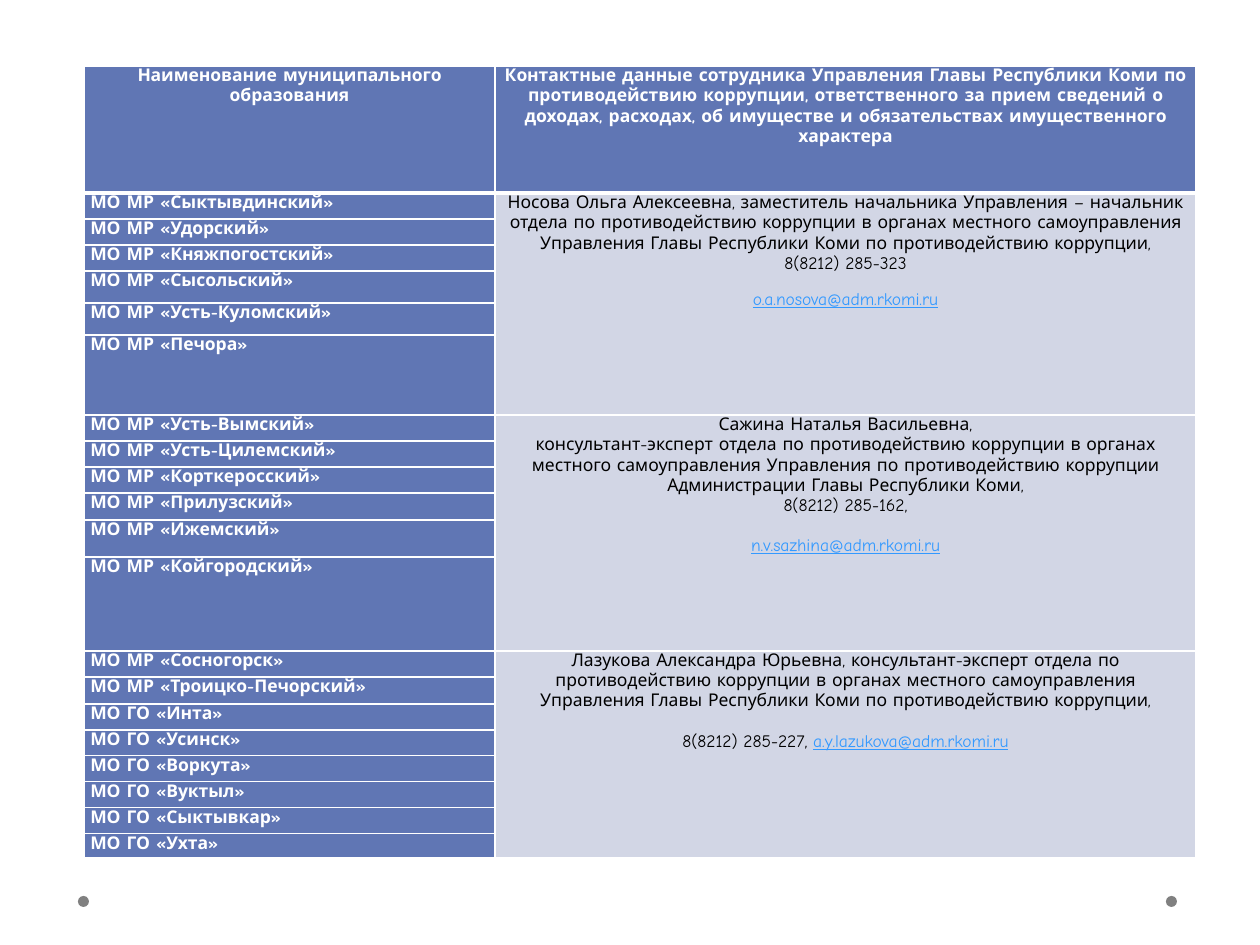
import pptx
import pptx.dml.color
import pptx.enum.shapes
import pptx.enum.text
import pptx.util
import lxml.etree

PX = 914400 // 126
FONT = "Comic Neue"
COLORS = {
    "white": "FFFFFF",
    "black": "000000",
    "district": "6076B4",
    "contact": "D2D6E5",
    "email": "3399FF",
    "dot": "808080",
}
ALIGN = pptx.enum.text.PP_ALIGN

HEADER_HEIGHT = 127
HEADERS = [
    "Наименование муниципального образования",
    "Контактные данные сотрудника Управления Главы Республики Коми по "
    "противодействию коррупции, ответственного за прием сведений о доходах, "
    "расходах, об имуществе и обязательствах имущественного характера",
]

# Each group: districts with row heights, then contact paragraphs
# (space before in points, text, e-mail)
GROUPS = [
    (
        [("МО МР «Сыктывдинский»", 26), ("МО МР «Удорский»", 26),
         ("МО МР «Княжпогостский»", 26), ("МО МР «Сысольский»", 32),
         ("МО МР «Усть-Куломский»", 32), ("МО МР «Печора»", 80)],
        [(0, "Носова Ольга Алексеевна, заместитель начальника Управления – "
             "начальник отдела по противодействию коррупции в органах местного "
             "самоуправления Управления Главы Республики Коми по "
             "противодействию коррупции,", ""),
         (0, "8(8212) 285-323", ""),
         (9, "", "o.a.nosova@adm.rkomi.ru")],
    ),
    (
        [("МО МР «Усть-Вымский»", 26), ("МО МР «Усть-Цилемский»", 26),
         ("МО МР «Корткеросский»", 26), ("МО МР «Прилузский»", 27),
         ("МО МР «Ижемский»", 37), ("МО МР «Койгородский»", 94)],
        [(0, "Сажина Наталья Васильевна,", ""),
         (0, "консультант-эксперт отдела по противодействию коррупции в органах "
             "местного самоуправления Управления по противодействию коррупции "
             "Администрации Главы Республики Коми,\v8(8212) 285-162,", ""),
         (11.5, "", "n.v.sazhina@adm.rkomi.ru")],
    ),
    (
        [("МО МР «Сосногорск»", 26), ("МО МР «Троицко-Печорский»", 27),
         ("МО ГО «Инта»", 26), ("МО ГО «Усинск»", 26), ("МО ГО «Воркута»", 26),
         ("МО ГО «Вуктыл»", 26), ("МО ГО «Сыктывкар»", 26), ("МО ГО «Ухта»", 24)],
        [(0, "Лазукова Александра Юрьевна, консультант-эксперт отдела по "
             "противодействию коррупции в органах местного самоуправления "
             "Управления Главы Республики Коми по противодействию коррупции,", ""),
         (11.5, "8(8212) 285-227, ", "a.y.lazukova@adm.rkomi.ru")],
    ),
]


def rgb(name):
    return pptx.dml.color.RGBColor.from_string(COLORS[name])


def format_run(run, color, bold=False, underline=False):
    run.font.name = FONT
    run.font.size = pptx.util.Pt(10)
    run.font.bold = bold
    run.font.underline = underline
    run.font.color.rgb = rgb(color)


def style_cell(cell, fill, top=1, bottom=1):
    """Set margins, white borders (widths in points) and fill."""
    cell.margin_left = cell.margin_right = pptx.util.Inches(0.05)
    cell.margin_top = cell.margin_bottom = 0
    properties = cell._tc.get_or_add_tcPr()
    for side, width in (("L", 1), ("R", 1), ("T", top), ("B", bottom)):
        line = lxml.etree.SubElement(
            properties, pptx.oxml.ns.qn(f"a:ln{side}"), w=str(pptx.util.Pt(width)))
        solid = lxml.etree.SubElement(line, pptx.oxml.ns.qn("a:solidFill"))
        lxml.etree.SubElement(
            solid, pptx.oxml.ns.qn("a:srgbClr"), val=COLORS["white"])
    cell.fill.solid()
    cell.fill.fore_color.rgb = rgb(fill)


def write_label(cell, text, alignment):
    """Write one bold white paragraph."""
    paragraph = cell.text_frame.paragraphs[0]
    paragraph.text = text
    paragraph.alignment = alignment
    for run in paragraph.runs:
        format_run(run, "white", bold=True)


def write_contact(cell, contact):
    """Write the centred contact paragraphs."""
    frame = cell.text_frame
    for index, (gap, text, email) in enumerate(contact):
        paragraph = frame.add_paragraph() if index else frame.paragraphs[0]
        paragraph.text = text
        paragraph.alignment = ALIGN.CENTER
        if gap:
            paragraph.space_before = pptx.util.Pt(gap)
        for run in paragraph.runs:
            format_run(run, "black")
        if email:
            run = paragraph.add_run()
            run.text = email
            format_run(run, "email", underline=True)


def add_contact_table(slide, left, top, column_widths):
    districts = [district for group, _ in GROUPS for district in group]
    heights = [HEADER_HEIGHT] + [height for _, height in districts]
    table = slide.shapes.add_table(
        len(heights), len(column_widths), left * PX, top * PX,
        sum(column_widths) * PX, sum(heights) * PX).table
    for column, width in zip(table.columns, column_widths):
        column.width = width * PX
    for row, height in zip(table.rows, heights):
        row.height = height * PX

    # Header row
    for column, text in enumerate(HEADERS):
        cell = table.cell(0, column)
        style_cell(cell, "district", bottom=3)
        write_label(cell, text, ALIGN.CENTER)

    # Districts on the left, one merged contact cell per group on the right
    first = 1
    for group, contact in GROUPS:
        for row, (name, _) in enumerate(group, first):
            top_border = 3 if row == 1 else 1
            style_cell(table.cell(row, 0), "district", top=top_border)
            style_cell(table.cell(row, 1), "contact", top=top_border)
            write_label(table.cell(row, 0), name, ALIGN.LEFT)
        last = first + len(group) - 1
        table.cell(first, 1).merge(table.cell(last, 1))
        write_contact(table.cell(first, 1), contact)
        first = last + 1


def add_footer_dots(slide, lefts, top, size):
    for left in lefts:
        dot = slide.shapes.add_shape(
            pptx.enum.shapes.MSO_SHAPE.OVAL, left * PX, top * PX, size * PX, size * PX)
        dot.shadow.inherit = False
        dot.fill.solid()
        dot.fill.fore_color.rgb = rgb("dot")
        dot.line.fill.background()


def main():
    presentation = pptx.Presentation()
    presentation.slide_width = pptx.util.Inches(10)
    presentation.slide_height = pptx.util.Inches(7.5)
    slide = presentation.slides.add_slide(presentation.slide_layouts[6])
    add_footer_dots(slide, lefts=(1166, 78), top=896, size=11)
    add_contact_table(slide, left=84, top=66, column_widths=(411, 701))
    presentation.save("out.pptx")


if __name__ == "__main__":
    main()
